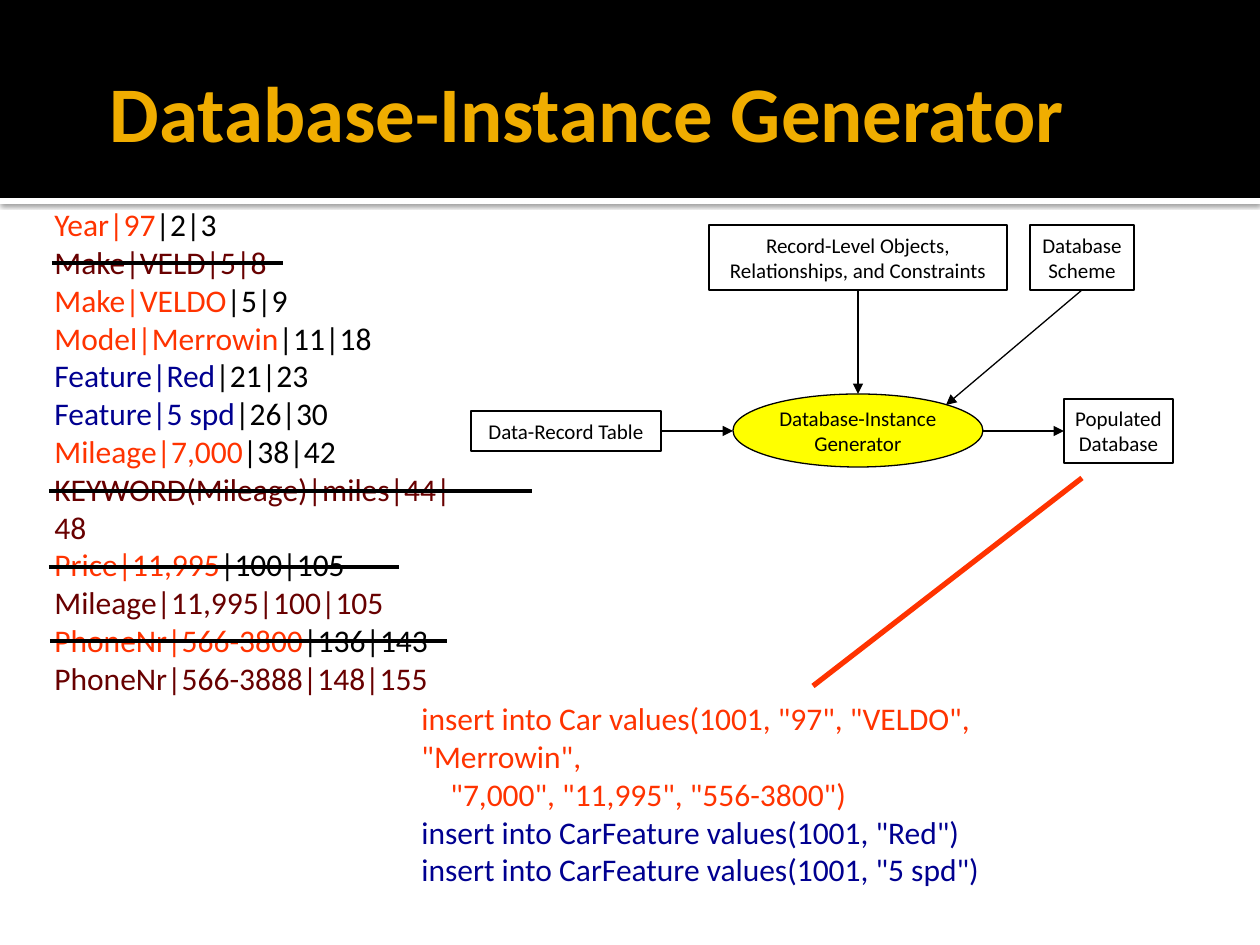
from lxml import etree
from pptx import Presentation
from pptx.dml.color import RGBColor
from pptx.enum.shapes import MSO_CONNECTOR, MSO_SHAPE
from pptx.enum.text import MSO_ANCHOR, PP_ALIGN
from pptx.oxml.ns import qn
from pptx.util import Emu, Pt

RECT, ELLIPSE, PROCESS = MSO_SHAPE.RECTANGLE, MSO_SHAPE.OVAL, MSO_SHAPE.FLOWCHART_PROCESS
STRAIGHT = MSO_CONNECTOR.STRAIGHT
MIDDLE = MSO_ANCHOR.MIDDLE
LEFT, CENTER = PP_ALIGN.LEFT, PP_ALIGN.CENTER
TOP_SIDE, LEFT_SIDE, BOTTOM_SIDE, RIGHT_SIDE = range(4)

FONT = "Calibri"
BLACK, WHITE, YELLOW, GOLD = "000000", "FFFFFF", "FFFF00", "F0AD00"
ORANGE, MAROON, NAVY = "FF3300", "680000", "000090"

TITLE = "Database-Instance Generator"

# Each record is a list of (text, colour) runs
RECORDS = [
    [("Year|97", ORANGE), ("|2|3", BLACK)],
    [("Make|VELD|5|8", MAROON)],
    [("Make|VELDO", ORANGE), ("|5|9", BLACK)],
    [("Model|Merrowin", ORANGE), ("|11|18", BLACK)],
    [("Feature|Red", NAVY), ("|21|23", BLACK)],
    [("Feature|5 spd", NAVY), ("|26|30", BLACK)],
    [("Mileage|7,000", ORANGE), ("|38|42", BLACK)],
    [("KEYWORD(Mileage)|miles|44|48", MAROON)],
    [("Price|11,995", ORANGE), ("|100|105", BLACK)],
    [("Mileage|11,995|100|105", MAROON)],
    [("PhoneNr|566-3800", ORANGE), ("|136|143", BLACK)],
    [("PhoneNr|566-3888|148|155", MAROON)],
]

# (text, colour, left margin)
STATEMENTS = [
    ('insert into Car values(1001, "97", "VELDO", "Merrowin",', ORANGE, 0),
    ('"7,000", "11,995", "556-3800")', ORANGE, 29),
    ('insert into CarFeature values(1001, "Red")', NAVY, 0),
    ('insert into CarFeature values(1001, "5 spd")', NAVY, 0),
]

# (x from, x to, y, width in points)
STRIKES = [(50, 447, 641, 2), (52, 283, 263, 2.25), (49, 399, 567, 2.25), (49, 532, 491, 2.25)]

# name: (preset, fill, box, inset, lines)
NODES = {
    "generator": (ELLIPSE, YELLOW, (733, 394, 250, 73), 0, ["Database-Instance", "Generator"]),
    "records": (PROCESS, WHITE, (471, 411, 190, 40), 6, ["Data-Record Table"]),
    "constraints": (PROCESS, WHITE, (709, 225, 298, 65), 6,
                    ["Record-Level Objects,", "Relationships, and Constraints"]),
    "scheme": (PROCESS, WHITE, (1030, 225, 104, 65), 6, ["Database", "Scheme"]),
    "database": (PROCESS, WHITE, (1064, 399, 109, 64), 6, ["Populated", "Database"]),
}

# (source box and side, target box and side, start, end); None where it meets the ellipse
ARROWS = [
    (("scheme", BOTTOM_SIDE), None, (1082, 290), (946, 405)),
    (("constraints", BOTTOM_SIDE), None, (858, 290), (858, 394)),
    (("records", RIGHT_SIDE), None, (661, 431), (733, 431)),
    (None, ("database", LEFT_SIDE), (983, 431), (1064, 431)),
]


def px(n):
    return Emu(round(n * 914400 / 126))


def rgb(color):
    return RGBColor.from_string(color)


def style(font, size, color=None, bold=False):
    font.name, font.size, font.bold = FONT, Pt(size), bold
    if color:
        font.color.rgb = rgb(color)


def set_insets(tf, left, top, right, bottom):
    tf.margin_left, tf.margin_top = px(left), px(top)
    tf.margin_right, tf.margin_bottom = px(right), px(bottom)


def next_paragraph(tf, i):
    return tf.add_paragraph() if i else tf.paragraphs[0]


def add_filled(s, preset, box, fill, line=None):
    sp = s.shapes.add_shape(preset, *map(px, box))
    sp.shadow.inherit = False
    sp.fill.solid()
    sp.fill.fore_color.rgb = rgb(fill)
    if line:
        sp.line.color.rgb = rgb(line)
        sp.line.width = Pt(0.75)
    else:
        sp.line.fill.background()
    return sp


def add_line(s, start, end, color, width, arrow=False):
    c = s.shapes.add_connector(STRAIGHT, *map(px, start + end))
    c.line.color.rgb = rgb(color)
    c.line.width = Pt(width)
    sp_pr = c.element.spPr
    if arrow:
        etree.SubElement(sp_pr.find(qn("a:ln")), qn("a:tailEnd"), type="triangle")
    etree.SubElement(sp_pr, qn("a:effectLst"))
    return c


def add_header(s):
    title = s.shapes.title
    band = add_filled(s, RECT, (0, 198, 1260, 6), WHITE)
    effects = band.element.spPr.find(qn("a:effectLst"))
    shadow = etree.SubElement(effects, qn("a:outerShdw"), blurRad=str(Pt(2.5)),
                              dist=str(Pt(0.8)), dir="5400000", rotWithShape="0")
    color = etree.SubElement(shadow, qn("a:srgbClr"), val=BLACK)
    etree.SubElement(color, qn("a:alpha"), val="60000")
    header = add_filled(s, RECT, (0, 0, 1260, 198), BLACK)
    for sp in (band, header):
        title.element.addprevious(sp.element)

    title.left, title.top, title.width, title.height = map(px, (97, 33, 1071, 157))
    tf = title.text_frame
    tf.text = TITLE
    tf.vertical_anchor = MIDDLE
    set_insets(tf, 13, 6, 6, 6)
    tf.paragraphs[0].alignment = LEFT
    style(tf.paragraphs[0].font, 45, GOLD, bold=True)


def add_records(s):
    tf = s.shapes.add_textbox(*map(px, (42, 199, 440, 501))).text_frame
    tf.word_wrap = True
    for i, runs in enumerate(RECORDS):
        p = next_paragraph(tf, i)
        style(p.font, 18)
        for text, color in runs:
            r = p.add_run()
            r.text = text
            r.font.color.rgb = rgb(color)


def add_statements(s):
    tf = s.shapes.add_textbox(*map(px, (409, 693, 722, 164))).text_frame
    tf.word_wrap = False
    for i, (text, color, margin) in enumerate(STATEMENTS):
        p = next_paragraph(tf, i)
        p.text = text
        style(p.font, 18, color)
        if margin:
            p._p.get_or_add_pPr().set("marL", str(px(margin)))


def add_node(s, preset, fill, box, inset, lines):
    sp = add_filled(s, preset, box, fill, BLACK)
    tf = sp.text_frame
    tf.word_wrap = False
    tf.vertical_anchor = MIDDLE
    set_insets(tf, *[inset] * 4)
    for i, text in enumerate(lines):
        p = next_paragraph(tf, i)
        p.text = text
        p.alignment = CENTER
        style(p.font, 12, BLACK)
    return sp


def main():
    prs = Presentation()
    prs.slide_width, prs.slide_height = px(1260), px(945)
    s = prs.slides.add_slide(prs.slide_layouts[5])
    add_header(s)
    add_records(s)
    add_statements(s)
    add_line(s, (1082, 478), (813, 686), ORANGE, 3)
    for x1, x2, y, width in STRIKES:
        add_line(s, (x1, y), (x2, y), BLACK, width)
    nodes = {name: add_node(s, *node) for name, node in NODES.items()}
    for source, target, start, end in ARROWS:
        c = add_line(s, start, end, BLACK, 0.75, arrow=True)
        if source:
            c.begin_connect(nodes[source[0]], source[1])
        if target:
            c.end_connect(nodes[target[0]], target[1])
    prs.save("out.pptx")


if __name__ == "__main__":
    main()
